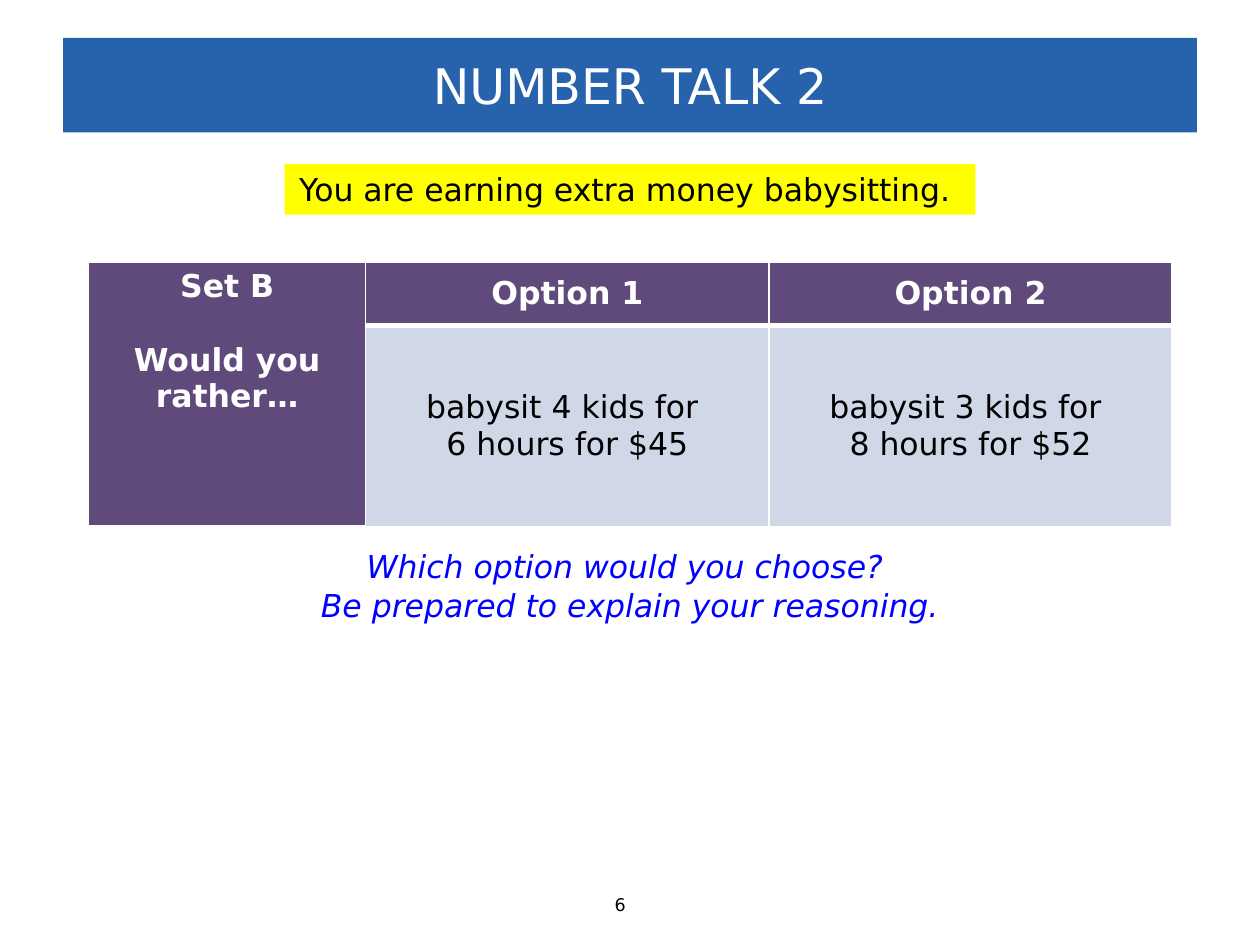
from lxml import etree
from pptx import Presentation
from pptx.dml.color import RGBColor
from pptx.enum import shapes, text
from pptx.oxml import ns
from pptx.util import Pt

FONT = "DejaVu Sans"
BLUE = RGBColor(0x27, 0x62, 0xAD)
QUESTION_BLUE = RGBColor(0x00, 0x00, 0xFF)
PURPLE = RGBColor(0x60, 0x4A, 0x7B)
PALE = RGBColor(0xD0, 0xD8, 0xE8)
YELLOW = RGBColor(0xFF, 0xFF, 0x00)
WHITE = RGBColor(0xFF, 0xFF, 0xFF)
BLACK = RGBColor(0x00, 0x00, 0x00)

CENTER = text.PP_ALIGN.CENTER
MIDDLE = text.MSO_ANCHOR.MIDDLE


def set_fill(item, color):
    item.fill.solid()
    item.fill.fore_color.rgb = color


def write(frame, lines, color, size=18, align=CENTER, line_spacing=None, **font_format):
    values = {"name": FONT, "size": Pt(size), **font_format}
    for number, line in enumerate(lines):
        para = frame.paragraphs[0] if number == 0 else frame.add_paragraph()
        para.alignment = align
        para.line_spacing = line_spacing
        span = para.add_run()
        span.text = line
        for name, value in values.items():
            setattr(span.font, name, value)
        span.font.color.rgb = color


def add_title(page, title):
    box = page.shapes.title
    box.left, box.top, box.width, box.height = Pt(36), Pt(21.6), Pt(648), Pt(54)
    set_fill(box, BLUE)
    box.text_frame.vertical_anchor = MIDDLE
    write(box.text_frame, [title], WHITE, size=28)


def add_banner(page, line):
    box = page.shapes.add_shape(shapes.MSO_SHAPE.RECTANGLE,
                                Pt(162.7), Pt(93.6), Pt(394.6), Pt(29.1))
    box.shadow.inherit = False
    set_fill(box, YELLOW)
    box.line.fill.background()
    box.text_frame.vertical_anchor = text.MSO_ANCHOR.TOP
    box.text_frame.word_wrap = True
    write(box.text_frame, [line], BLACK)


def add_text(page, place, lines, color, wrap=True, **text_format):
    box = page.shapes.add_textbox(*map(Pt, place))
    box.text_frame.word_wrap = wrap
    box.text_frame.auto_size = text.MSO_AUTO_SIZE.SHAPE_TO_FIT_TEXT
    write(box.text_frame, lines, color, **text_format)


def set_borders(cell, **widths):
    """Draw white cell borders, 1 pt wide unless a side (L, R, T, B) is given."""
    properties = cell._tc.get_or_add_tcPr()
    for side in "LRTB":
        line = etree.SubElement(properties, ns.qn(f"a:ln{side}"),
                                w=str(Pt(widths.get(side, 1))))
        fill = etree.SubElement(line, ns.qn("a:solidFill"))
        etree.SubElement(fill, ns.qn("a:srgbClr"), val=str(WHITE))


def add_options_table(page, prompt, options):
    """Put the prompt in a tall first cell, then one column for each option."""
    columns = [158.4] + [230.4] * len(options)
    rows = [36, 115.2]
    table = page.shapes.add_table(len(rows), len(columns), Pt(50.6), Pt(150),
                                  Pt(sum(columns)), Pt(sum(rows))).table
    for column, width in zip(table.columns, columns):
        column.width = Pt(width)
    for row, height in zip(table.rows, rows):
        row.height = Pt(height)

    prompt_cell = table.cell(0, 0)
    prompt_cell.merge(table.cell(1, 0))
    for cell in (prompt_cell, table.cell(1, 0)):
        set_borders(cell, B=3)
        set_fill(cell, PURPLE)
    write(prompt_cell.text_frame, prompt, WHITE, bold=True)
    prompt_cell.text_frame.paragraphs[1].space_before = Pt(21)

    for number, (heading, lines) in enumerate(options, start=1):
        header, body = table.cell(0, number), table.cell(1, number)
        set_borders(header, B=3)
        set_borders(body, T=3)
        set_fill(header, PURPLE)
        set_fill(body, PALE)
        header.vertical_anchor = body.vertical_anchor = MIDDLE
        write(header.text_frame, [heading], WHITE, bold=True)
        write(body.text_frame, lines, BLACK, bold=False)


def main():
    deck = Presentation()
    deck.slide_width, deck.slide_height = Pt(720), Pt(540)
    page = deck.slides.add_slide(deck.slide_layouts[5])
    add_title(page, "NUMBER TALK 2")
    add_text(page, (344.2, 507.6, 31.7, 19.4), ["6"], BLACK, wrap=False,
             size=10, align=text.PP_ALIGN.LEFT)
    add_text(page, (175.7, 308.2, 368.6, 51.1),
             ["Which option would you choose? ", "Be prepared to explain your reasoning."],
             QUESTION_BLUE, italic=True, line_spacing=1.04)
    add_options_table(page, ["Set B", "Would you rather…"], [
        ("Option 1", ["babysit 4 kids for ", "6 hours for $45"]),
        ("Option 2", ["babysit 3 kids for ", "8 hours for $52"]),
    ])
    add_banner(page, "You are earning extra money babysitting. ")
    deck.save("out.pptx")


if __name__ == "__main__":
    main()
